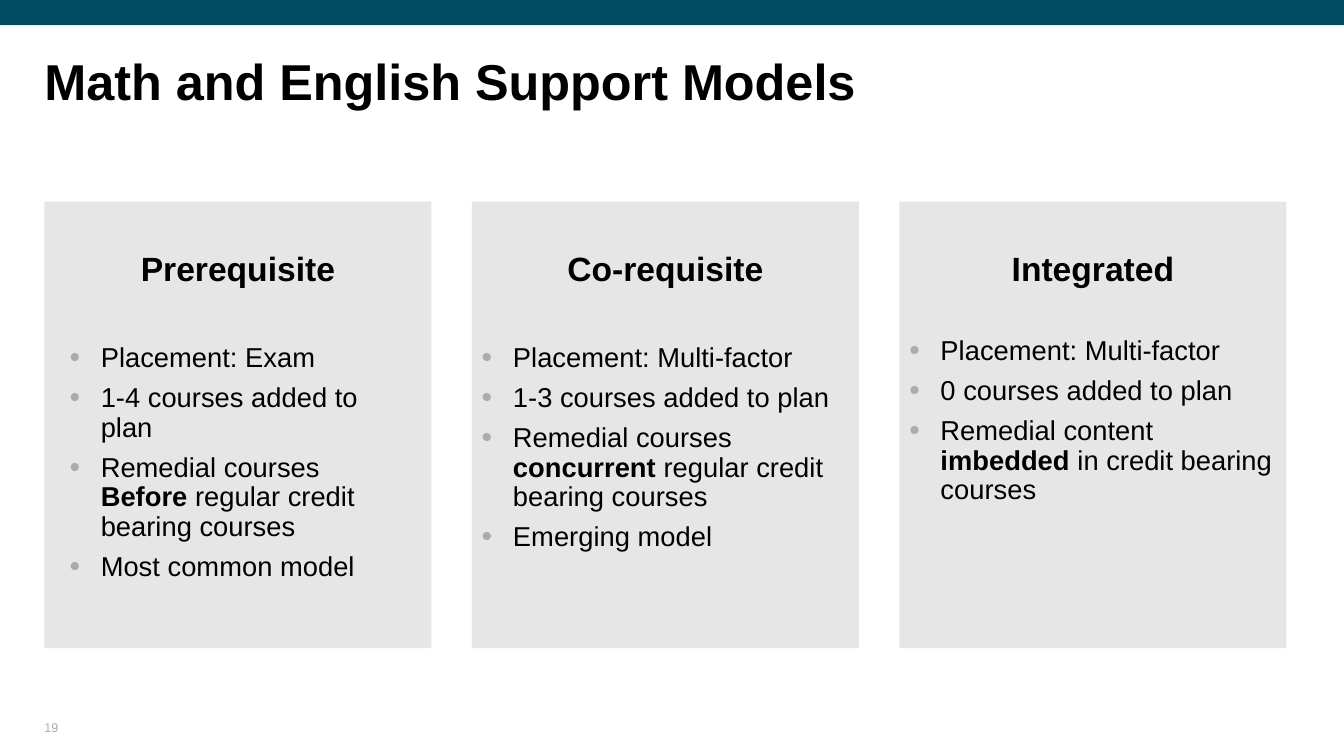
from dataclasses import dataclass

from lxml import etree
from pptx import Presentation
from pptx import util as u
from pptx.dml.color import RGBColor
from pptx.enum import shapes, text
from pptx.oxml.ns import qn

SCALE = 9144  # EMU in one px, 100 px to the inch
FONT = "Arial"
BLACK, GRAY, PANEL, TEAL = "000000", "AFABAB", "E7E6E6", "014B64"
LEFT, TOP, WIDE, HIGH, PITCH = 44, 200, 384, 443, 424
INDENT = 31


@dataclass
class Model:
    name: str
    inset: int
    gap: float
    points: list[str]  # words between asterisks are bold


MODELS = [
    Model("Prerequisite", 25, 40, [
        "Placement: Exam",
        "1-4 courses added to plan",
        "Remedial courses *Before* regular credit bearing courses",
        "Most common model",
    ]),
    Model("Co-requisite", 10, 40, [
        "Placement: Multi-factor",
        "1-3 courses added to plan",
        "Remedial courses* concurrent* regular credit bearing courses",
        "Emerging model",
    ]),
    Model("Integrated", 10, 35, [
        "Placement: Multi-factor",
        "0 courses added to plan",
        "Remedial content *imbedded* in credit bearing courses",
    ]),
]


def px(n: int) -> u.Emu:
    return u.Emu(n * SCALE)


def color(code: str) -> RGBColor:
    return RGBColor.from_string(code)


def apply(item, values: dict) -> None:
    for key, value in values.items():
        setattr(item, key, value)


def add_run(para, words: str, size: float, bold: bool = False, ink: str = BLACK) -> None:
    run = para.add_run()
    run.text = words
    apply(run.font, {"name": FONT, "size": u.Pt(size), "bold": bold})
    run.font.color.rgb = color(ink)


def add_box(slide, left: int, top: int, wide: int, high: int, fill: str):
    box = slide.shapes.add_shape(
        shapes.MSO_SHAPE.RECTANGLE, px(left), px(top), px(wide), px(high))
    box.shadow.inherit = False
    box.fill.solid()
    box.fill.fore_color.rgb = color(fill)
    box.line.fill.background()
    return box


def set_frame(frame, sides: int = 0, top: int = 0, base: int = 0,
              anchor=text.MSO_ANCHOR.TOP) -> None:
    apply(frame, {
        "margin_left": px(sides), "margin_right": px(sides),
        "margin_top": px(top), "margin_bottom": px(base),
        "word_wrap": True, "vertical_anchor": anchor,
    })


def add_label(slide, left: int, top: int, wide: int, high: int, words: str,
              size: float, bold: bool, ink: str, anchor):
    box = slide.shapes.add_textbox(px(left), px(top), px(wide), px(high))
    set_frame(box.text_frame, anchor=anchor)
    para = box.text_frame.paragraphs[0]
    add_run(para, words, size, bold, ink)
    return para


def add_bullet(para) -> None:
    props = para._p.get_or_add_pPr()
    props.set("marL", str(px(INDENT)))
    props.set("indent", str(px(-INDENT)))
    tint = etree.SubElement(props, qn("a:buClr"))
    etree.SubElement(tint, qn("a:srgbClr"), val=GRAY)
    etree.SubElement(props, qn("a:buSzPct"), val="110000")
    etree.SubElement(props, qn("a:buFont"), typeface=FONT)
    etree.SubElement(props, qn("a:buChar"), char="•")


def add_model(slide, model: Model, left: int) -> None:
    frame = add_box(slide, left, TOP, WIDE, HIGH, PANEL).text_frame
    set_frame(frame, model.inset, 50, 5)
    head = frame.paragraphs[0]
    apply(head, {"alignment": text.PP_ALIGN.CENTER, "line_spacing": 0.9})
    add_run(head, model.name, 24, True)
    for i, point in enumerate(model.points):
        para = frame.add_paragraph()
        apply(para, {
            "alignment": text.PP_ALIGN.LEFT, "line_spacing": 0.9,
            "space_before": u.Pt(7.5 if i else model.gap),
        })
        add_bullet(para)
        for j, words in enumerate(point.split("*")):
            add_run(para, words, 19.5, j % 2 == 1)


def main() -> None:
    deck = Presentation()
    apply(deck, {"slide_width": px(1333), "slide_height": px(750)})
    slide = deck.slides.add_slide(deck.slide_layouts[6])
    add_box(slide, 0, 0, 1333, 25, TEAL)
    title = add_label(slide, LEFT, 57, 1232, 127, "Math and English Support Models",
                      36, True, BLACK, text.MSO_ANCHOR.TOP)
    title.line_spacing = 0.9
    for i, model in enumerate(MODELS):
        add_model(slide, model, LEFT + i * PITCH)
    add_label(slide, LEFT, 705, 300, 24, "19", 9, False, GRAY, text.MSO_ANCHOR.BOTTOM)
    deck.save("out.pptx")


if __name__ == "__main__":
    main()
